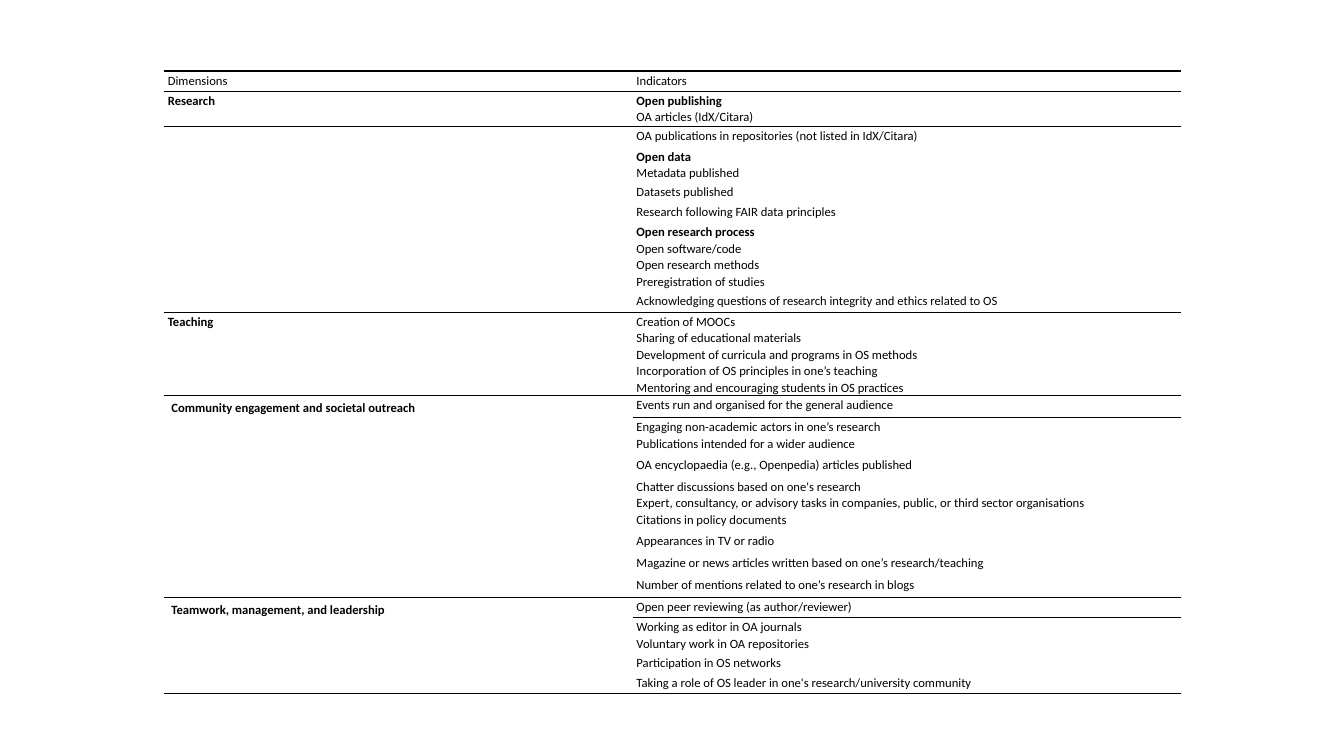
from pptx import Presentation
from pptx.dml.color import RGBColor
from pptx.enum.text import MSO_ANCHOR
from pptx.oxml.xmlchemy import OxmlElement
from pptx.util import Cm, Pt

TOP = MSO_ANCHOR.TOP
FONT = "Calibri"
FONT_SIZE = 9
INK = "000000"
NO_GRID_STYLE = "{2D5ABB26-0587-4C30-8999-92F81FD0307C}"
TABLE_LEFT, TABLE_TOP = 4.13, 1.79
COLUMN_WIDTHS = (11.81, 13.82)
NARROW_MARGINS = (0.1, 0.03, 0.1, 0)
WIDE_MARGINS = (0.19, 0.1, 0.19, 0.1)

HEADINGS = {
    "Research", "Teaching", "Community engagement and societal outreach",
    "Teamwork, management, and leadership",
    "Open publishing", "Open data", "Open research process",
}

SECTIONS = [
    {"dimension": "Dimensions", "margins": NARROW_MARGINS, "spans": [1],
     "rows": [(0.51, ["Indicators"])]},
    {"dimension": "Research", "margins": NARROW_MARGINS, "spans": [1, 1, 3, 2],
     "rows": [
         (0.89, ["Open publishing", "OA articles (IdX/Citara)"]),
         (0.51, ["OA publications in repositories (not listed in IdX/Citara)"]),
         (0.89, ["Open data", "Metadata published"]),
         (0.51, ["Datasets published"]),
         (0.51, ["Research following FAIR data principles"]),
         (1.73, ["Open research process", "Open software/code",
                 "Open research methods", "Preregistration of studies"]),
         (0.53, ["Acknowledging questions of research integrity and ethics related to OS"]),
     ]},
    {"dimension": "Teaching", "margins": NARROW_MARGINS, "spans": [1],
     "rows": [
         (2.08, ["Creation of MOOCs",
                 "Sharing of educational materials",
                 "Development of curricula and programs in OS methods",
                 "Incorporation of OS principles in one’s teaching",
                 "Mentoring and encouraging students in OS practices"]),
     ]},
    {"dimension": "Community engagement and societal outreach",
     "margins": WIDE_MARGINS, "spans": [7],
     "rows": [
         (0.56, ["Events run and organised for the general audience"]),
         (0.94, ["Engaging non-academic actors in one’s research",
                 "Publications intended for a wider audience"]),
         (0.56, ["OA encyclopaedia (e.g., Openpedia) articles published"]),
         (1.35, ["Chatter discussions based on one's research",
                 "Expert, consultancy, or advisory tasks in companies, public, "
                 "or third sector organisations",
                 "Citations in policy documents"]),
         (0.56, ["Appearances in TV or radio"]),
         (0.56, ["Magazine or news articles written based on one’s research/teaching"]),
         (0.56, ["Number of mentions related to one’s research in blogs"]),
     ]},
    {"dimension": "Teamwork, management, and leadership",
     "margins": WIDE_MARGINS, "spans": [4],
     "rows": [
         (0.51, ["Open peer reviewing (as author/reviewer)"]),
         (0.89, ["Working as editor in OA journals",
                 "Voluntary work in OA repositories"]),
         (0.51, ["Participation in OS networks"]),
         (0.51, ["Taking a role of OS leader in one's research/university community"]),
     ]},
]


def color(value):
    return RGBColor.from_string(value)


def write_cell(cell, lines, margins):
    left, top, right, bottom = margins
    cell.margin_left, cell.margin_top = Cm(left), Cm(top)
    cell.margin_right, cell.margin_bottom = Cm(right), Cm(bottom)
    cell.vertical_anchor = TOP
    cell.text_frame.text = "\n".join(lines)
    for para in cell.text_frame.paragraphs:
        para.line_spacing = 1.07
        for span in para.runs:
            span.font.name = FONT
            span.font.size = Pt(FONT_SIZE)
            span.font.bold = span.text in HEADINGS
            span.font.color.rgb = color(INK)
        if not para.runs:
            ending = OxmlElement("a:endParaRPr")
            ending.set("sz", str(FONT_SIZE * 100))
            para._p.append(ending)


def rule_cell(cell, top, bottom):
    properties = cell._tc.get_or_add_tcPr()
    for tag, wanted in (("a:lnT", top), ("a:lnB", bottom)):
        if wanted:
            line = OxmlElement(tag)
            line.set("w", str(Pt(1)))
            fill = OxmlElement("a:solidFill")
            ink = OxmlElement("a:srgbClr")
            ink.set("val", INK)
            fill.append(ink)
            line.append(fill)
            properties.append(line)
    cell.fill.background()


def fill_section(table, section, first):
    rows = section["rows"]
    last = first + len(rows) - 1
    for index, (height, lines) in enumerate(rows, first):
        table.rows[index].height = Cm(height)
        write_cell(table.cell(index, 1), lines, NARROW_MARGINS)
        rule_cell(table.cell(index, 1), index == first, index == last)
    start = first
    for span in section["spans"]:
        end = start + span - 1
        for index in range(start, end + 1):
            lines = [section["dimension"]] if index == first else []
            cell = table.cell(index, 0)
            write_cell(cell, lines, section["margins"])
            closes = end == last and index in (start, end)
            rule_cell(cell, index == first, closes)
        if span > 1:
            table.cell(start, 0).merge(table.cell(end, 0))
        start = end + 1
    return last + 1


def main():
    deck = Presentation()
    deck.slide_width, deck.slide_height = Cm(33.87), Cm(19.05)
    page = deck.slides.add_slide(deck.slide_layouts[6])
    heights = [height for section in SECTIONS for height, lines in section["rows"]]
    frame = page.shapes.add_table(
        len(heights), len(COLUMN_WIDTHS), Cm(TABLE_LEFT), Cm(TABLE_TOP),
        Cm(sum(COLUMN_WIDTHS)), Cm(sum(heights)))
    table = frame.table
    table.first_row = False
    table.horz_banding = False
    table._tbl.tblPr[0].text = NO_GRID_STYLE
    for column, width in zip(table.columns, COLUMN_WIDTHS):
        column.width = Cm(width)
    first = 0
    for section in SECTIONS:
        first = fill_section(table, section, first)
    deck.save("out.pptx")


if __name__ == "__main__":
    main()
